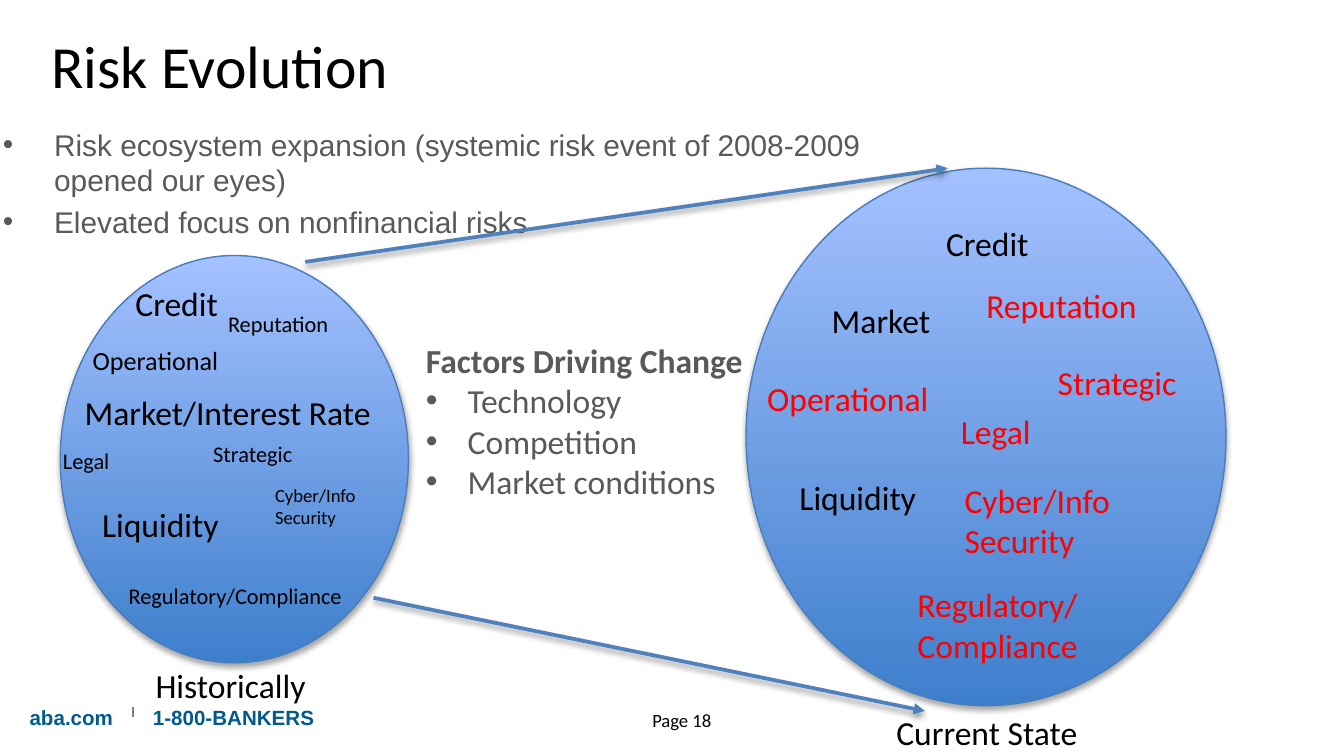
"""Build the Risk Evolution slide comparing historical and current risks."""
from lxml.etree import SubElement
from pptx import Presentation
from pptx.dml.color import RGBColor
from pptx.enum.shapes import MSO_CONNECTOR, MSO_SHAPE
from pptx.enum.text import MSO_ANCHOR, MSO_AUTO_SIZE, PP_ALIGN
from pptx.oxml.ns import qn
from pptx.util import Cm, Pt

BLACK = RGBColor(0x00, 0x00, 0x00)
RED = RGBColor(0xFF, 0x00, 0x00)
GRAY = RGBColor(0x59, 0x59, 0x59)
RULE_GRAY = RGBColor(0x80, 0x80, 0x80)
NAVY = RGBColor(0x00, 0x5A, 0x8C)
BLUE = RGBColor(0x4F, 0x81, 0xBD)


def style(paragraph, size, color, name="Calibri", bold=False):
    font = paragraph.font
    font.size, font.name, font.bold = Pt(size), name, bold
    font.color.rgb = color


def add_bullet(paragraph, indent):
    properties = paragraph._p.get_or_add_pPr()
    properties.set("marL", str(Cm(indent)))
    properties.set("indent", str(-Cm(indent)))
    SubElement(properties, qn("a:buFont"), typeface="Arial")
    SubElement(properties, qn("a:buChar"), char="•")


presentation = Presentation()
presentation.slide_width, presentation.slide_height = Cm(25.4), Cm(14.29)
slide = presentation.slides.add_slide(presentation.slide_layouts[1])
shapes = slide.shapes

title = shapes.title
title.left, title.top, title.width, title.height = Cm(0.71), Cm(0.41), Cm(18.62), Cm(1.63)
title.text_frame.text = "Risk Evolution"
title.text_frame.vertical_anchor = MSO_ANCHOR.TOP
title.text_frame.auto_size = MSO_AUTO_SIZE.NONE
title.text_frame.paragraphs[0].alignment = PP_ALIGN.LEFT
style(title.text_frame.paragraphs[0], 32, BLACK)

trends = slide.placeholders[1]
trends.left, trends.top, trends.width, trends.height = Cm(-0.2), Cm(2.26), Cm(16.84), Cm(6.96)
trends.text_frame.text = (
    "Risk ecosystem expansion (systemic risk event of 2008-2009 opened our eyes)\n"
    "Elevated focus on nonfinancial risks"
)
trends.text_frame.auto_size = MSO_AUTO_SIZE.NONE
for trend, space in zip(trends.text_frame.paragraphs, (0, 3.2)):
    trend.space_before = Pt(space)
    add_bullet(trend, 0.97)
    style(trend, 16, GRAY, "Arial")

for left, top, width, height in ((14.1, 3.18, 9.07, 10.16), (1.14, 4.83, 6.58, 7.7)):
    shapes.add_shape(MSO_SHAPE.OVAL, Cm(left), Cm(top), Cm(width), Cm(height))

for ends in ((5.77, 4.95, 17.91, 3.18), (7.06, 11.3, 17.48, 13.44)):
    growth = shapes.add_connector(MSO_CONNECTOR.STRAIGHT, *map(Cm, ends))
    growth.line.color.rgb = BLUE
    growth.line.width = Pt(2)
    SubElement(growth.line._get_or_add_ln(), qn("a:tailEnd"), type="triangle")

labels = (
    ("Credit", 17.63, 4.09, 2.69, 1.02, 18, BLACK),
    ("Market", 15.47, 5.54, 2.69, 1.02, 18, BLACK),
    ("Liquidity", 14.86, 8.89, 2.9, 1.02, 18, BLACK),
    ("Operational", 14.25, 7.01, 4.06, 1.02, 18, RED),
    ("Cyber/Info Security", 17.98, 8.94, 4.09, 1.8, 18, RED),
    ("Reputation", 18.39, 5.26, 4.11, 1.02, 18, RED),
    ("Regulatory/Compliance", 17.09, 10.92, 3.84, 1.8, 18, RED),
    ("Legal", 17.91, 7.65, 2.29, 1.02, 18, RED),
    ("Strategic", 19.74, 6.71, 3, 1.02, 18, RED),
    ("Credit", 2.31, 5.23, 3.48, 1.02, 18, BLACK),
    ("Market/Interest Rate", 1.35, 7.29, 6.12, 1.02, 18, BLACK),
    ("Liquidity", 1.68, 9.4, 3.76, 1.02, 18, BLACK),
    ("Cyber/Info Security", 4.95, 9.02, 2.97, 1.12, 10, BLACK),
    ("Operational", 1.5, 6.38, 3.86, 0.86, 14, BLACK),
    ("Reputation", 4.06, 5.74, 3.3, 0.76, 12, BLACK),
    ("Regulatory/Compliance", 2.18, 10.87, 5, 0.76, 12, BLACK),
    ("Legal", 0.94, 8.33, 2.97, 0.76, 12, BLACK),
    ("Strategic", 3.78, 8.2, 2.97, 0.76, 12, BLACK),
    ("Historically", 2.69, 12.45, 7.09, 1.02, 18, BLACK),
    ("Current State", 16.69, 13.34, 4.27, 1.02, 18, BLACK),
)
for text, left, top, width, height, size, color in labels:
    label = shapes.add_textbox(Cm(left), Cm(top), Cm(width), Cm(height)).text_frame
    label.word_wrap = True
    label.text = text
    style(label.paragraphs[0], size, color)

factors = shapes.add_textbox(Cm(7.8), Cm(6.3), Cm(6.86), Cm(3.33)).text_frame
factors.word_wrap = True
factors.text = "Factors Driving Change\nTechnology\nCompetition\nMarket conditions"
heading, *drivers = factors.paragraphs
style(heading, 18, GRAY, bold=True)
for driver in drivers:
    add_bullet(driver, 0.79)
    style(driver, 18, GRAY)

page = shapes.add_textbox(Cm(11.07), Cm(13.28), Cm(3.63), Cm(0.69)).text_frame
page.word_wrap = True
page.text = "Page 18"
page.paragraphs[0].alignment = PP_ALIGN.CENTER
style(page.paragraphs[0], 10, BLACK)

contact = shapes.add_textbox(Cm(0.28), Cm(13.18), Cm(7.62), Cm(0.76)).text_frame
contact.word_wrap = True
contact.margin_left = contact.margin_right = Cm(0.28)
contact.margin_top = contact.margin_bottom = Cm(0.15)
contact.text = "aba.com\t1-800-BANKERS"
tabs = SubElement(contact.paragraphs[0]._p.get_or_add_pPr(), qn("a:tabLst"))
SubElement(tabs, qn("a:tab"), pos=str(Cm(2.33)), algn="l")
style(contact.paragraphs[0], 11, NAVY, "Arial", True)

divider = shapes.add_connector(MSO_CONNECTOR.STRAIGHT, Cm(2.51), Cm(13.36), Cm(2.51), Cm(13.56))
divider.line.color.rgb = RULE_GRAY
divider.line.width = Pt(1)
SubElement(divider._element.spPr, qn("a:effectLst"))

presentation.save("out.pptx")
